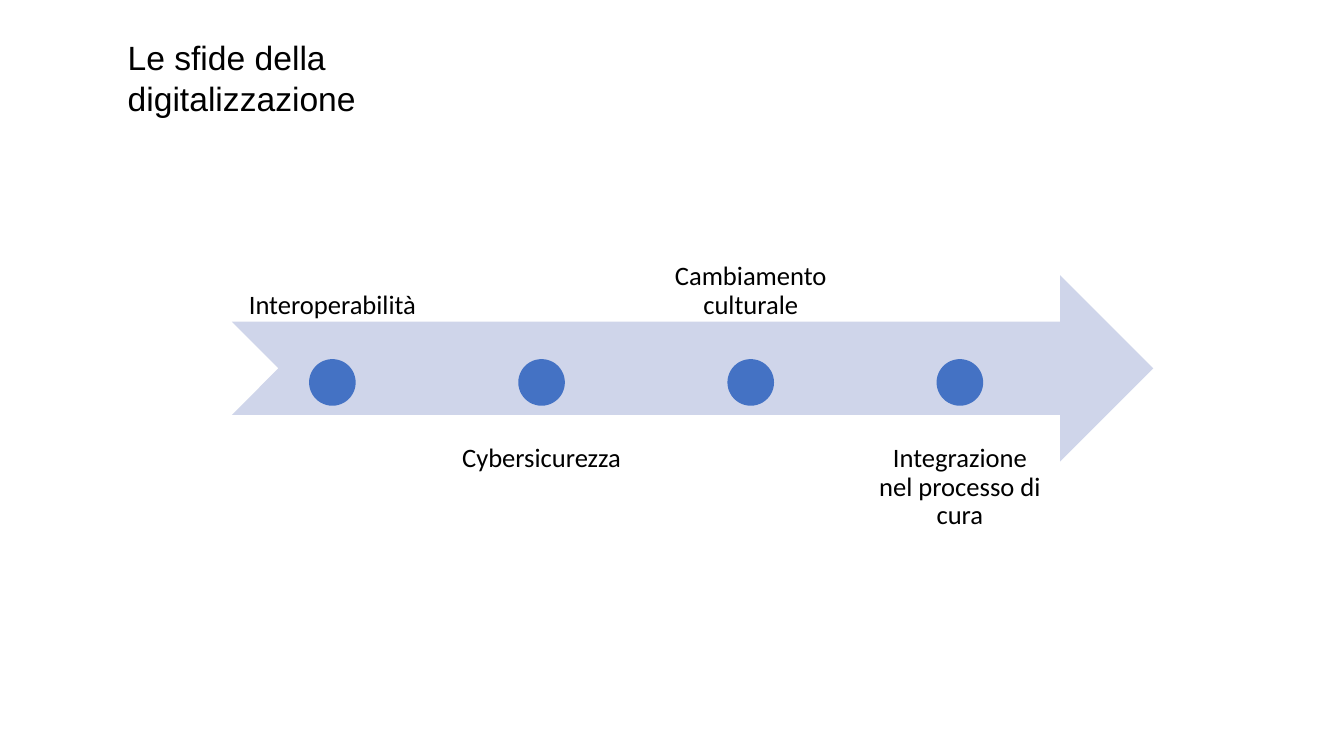
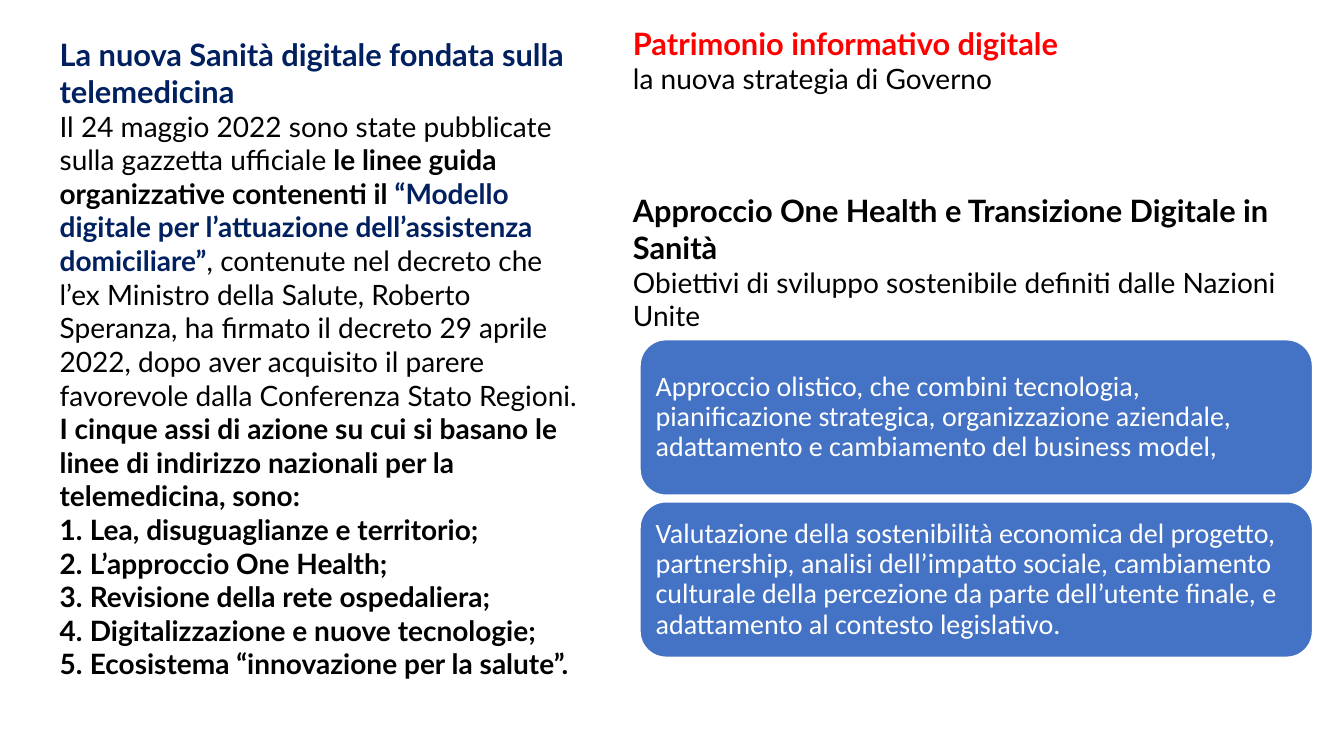
from dataclasses import dataclass, replace

from lxml.etree import SubElement
from pptx import Presentation
from pptx.dml.color import RGBColor
from pptx.enum.shapes import MSO_SHAPE
from pptx.enum.text import MSO_ANCHOR, MSO_AUTO_SIZE, PP_ALIGN
from pptx.oxml.ns import qn
from pptx.shapes.autoshape import Shape
from pptx.slide import Slide
from pptx.text.text import TextFrame
from pptx.util import Emu, Inches, Pt

BLACK = RGBColor(0x00, 0x00, 0x00)
WHITE = RGBColor(0xFF, 0xFF, 0xFF)
NAVY = RGBColor(0x00, 0x20, 0x60)
RED = RGBColor(0xFF, 0x00, 0x00)
BLUE = RGBColor(0x44, 0x72, 0xC4)
PALE = RGBColor(0xCF, 0xD5, 0xEA)

WIDTH, HEIGHT = Inches(13.33), Inches(7.5)
COLS, ROWS = 32, 18
PAD_X, PAD_Y = 0.24, 0.12


@dataclass(frozen=True)
class Box:
    col: float
    row: float
    wide: float
    high: float


@dataclass(frozen=True)
class Style:
    face: str
    size: int
    color: RGBColor = BLACK
    bold: bool = False


@dataclass(frozen=True)
class Span:
    text: str
    style: Style


@dataclass(frozen=True)
class Para:
    spans: tuple[Span, ...]
    listed: bool = False


HEAD = Style("Lato", 22, bold=True)
PLAIN = Style("Lato", 20)
STRONG = replace(PLAIN, bold=True)
LABEL = Style("Calibri", 19)
CARD = Style("Calibri", 20, WHITE)


def across(cols: float) -> Emu:
    return Emu(round(WIDTH * cols / COLS))


def down(rows: float) -> Emu:
    return Emu(round(HEIGHT * rows / ROWS))


def frame(box: Box) -> tuple[Emu, Emu, Emu, Emu]:
    return across(box.col), down(box.row), across(box.wide), down(box.high)


def line(text: str, style: Style, listed: bool = False) -> Para:
    return Para((Span(text, style),), listed)


def write(
    body: TextFrame,
    paras: list[Para],
    align: PP_ALIGN = PP_ALIGN.LEFT,
    anchor: MSO_ANCHOR = MSO_ANCHOR.TOP,
    pad_x: float = PAD_X,
    pad_y: float = PAD_Y,
    pitch: float = 1.0,
) -> None:
    body.word_wrap = True
    body.auto_size = MSO_AUTO_SIZE.NONE
    body.vertical_anchor = anchor
    body.margin_left = body.margin_right = across(pad_x)
    body.margin_top = body.margin_bottom = down(pad_y)
    for index, para in enumerate(paras):
        part = body.add_paragraph() if index else body.paragraphs[0]
        if para.listed:
            props = part._p.get_or_add_pPr()
            props.set("marL", str(across(0.72)))
            props.set("indent", str(-across(0.72)))
            SubElement(props, qn("a:buFont"), typeface="+mj-lt")
            SubElement(props, qn("a:buAutoNum"), type="arabicPeriod")
        part.alignment = align
        part.line_spacing = pitch
        for span in para.spans:
            run = part.add_run()
            run.text = span.text
            font = run.font
            font.name = span.style.face
            font.size = Pt(span.style.size)
            font.bold = span.style.bold
            font.color.rgb = span.style.color


def add_title(slide: Slide, box: Box, text: str, style: Style) -> None:
    title = slide.shapes.title
    title.left, title.top, title.width, title.height = frame(box)
    write(title.text_frame, [line(text, style)])


def add_text(slide: Slide, box: Box, paras: list[Para]) -> None:
    write(slide.shapes.add_textbox(*frame(box)).text_frame, paras)


def add_form(slide: Slide, kind: MSO_SHAPE, box: Box, fill: RGBColor) -> Shape:
    form = slide.shapes.add_shape(kind, *frame(box))
    form.shadow.inherit = False
    form.fill.solid()
    form.fill.fore_color.rgb = fill
    form.line.fill.background()
    return form


def add_step(slide: Slide, index: int, text: str) -> None:
    wide, dot = 4.75, 1.11
    col = 5.54 + 4.98 * index
    below = index % 2 == 1
    spot = Box(col, 10.22 if below else 3.55, wide, 4.44)
    label = slide.shapes.add_textbox(*frame(spot))
    anchor = MSO_ANCHOR.TOP if below else MSO_ANCHOR.BOTTOM
    write(label.text_frame, [line(text, LABEL)], PP_ALIGN.CENTER, anchor, 0.36, 0.36, 0.9)
    add_form(slide, MSO_SHAPE.OVAL, Box(col + (wide - dot) / 2, 8.55, dot, dot), BLUE)


def add_card(slide: Slide, index: int, text: str) -> None:
    box = Box(15.24, 8.09 + 3.86 * index, 16.01, 3.7)
    card = add_form(slide, MSO_SHAPE.ROUNDED_RECTANGLE, box, BLUE)
    card.line.color.rgb = WHITE
    card.line.width = Pt(1)
    write(card.text_frame, [line(text, CARD)], PP_ALIGN.LEFT, MSO_ANCHOR.MIDDLE, 0.19, 0.19, 0.9)


def draw_trials(slide: Slide) -> None:
    add_title(slide, Box(2.8, 0.77, 9.17, 2.2), "Le sfide della digitalizzazione", Style("Arial", 24))
    add_form(slide, MSO_SHAPE.NOTCHED_RIGHT_ARROW, Box(5.52, 6.55, 21.94, 4.44), PALE)
    steps = (
        "Interoperabilità",
        "Cybersicurezza",
        "Cambiamento culturale",
        "Integrazione nel processo di cura",
    )
    for index, text in enumerate(steps):
        add_step(slide, index, text)


def draw_health(slide: Slide) -> None:
    add_title(
        slide,
        Box(1.18, 0.72, 12.84, 2),
        "La nuova Sanità digitale fondata sulla telemedicina",
        replace(HEAD, color=NAVY),
    )
    news = Para((
        Span("Il 24 maggio 2022 sono state pubblicate sulla gazzetta ufficiale", PLAIN),
        Span(" le linee guida organizzative contenenti il ", STRONG),
        Span(
            "“Modello digitale per l’attuazione dell’assistenza domiciliare”",
            replace(STRONG, color=NAVY),
        ),
        Span(
            ", contenute nel decreto che l’ex Ministro della Salute, Roberto Speranza, "
            "ha firmato il decreto 29 aprile 2022, dopo aver acquisito il parere "
            "favorevole dalla Conferenza Stato Regioni.",
            PLAIN,
        ),
    ))
    lead = line(
        "I cinque assi di azione su cui si basano le linee di indirizzo nazionali "
        "per la telemedicina, sono:",
        STRONG,
    )
    goals = (
        "Lea, disuguaglianze e territorio;",
        "L’approccio One Health;",
        "Revisione della rete ospedaliera;",
        "Digitalizzazione e nuove tecnologie;",
        "Ecosistema “innovazione per la salute”.",
    )
    items = [line(text, STRONG, True) for text in goals]
    add_text(slide, Box(1.18, 2.48, 12.84, 14), [news, lead, *items])
    add_text(slide, Box(14.83, 4.44, 16.8, 2.83), [
        line("Approccio One Health e Transizione Digitale in Sanità", HEAD),
        line("Obiettivi di sviluppo sostenibile definiti dalle Nazioni Unite", PLAIN),
    ])
    add_text(slide, Box(14.83, 0.46, 16, 1.94), [
        line("Patrimonio informativo digitale", replace(HEAD, color=RED)),
        line("la nuova strategia di Governo", PLAIN),
    ])
    cards = (
        "Approccio olistico, che combini tecnologia, pianificazione strategica, "
        "organizzazione aziendale, adattamento e cambiamento del business model,",
        "Valutazione della sostenibilità economica del progetto, partnership, "
        "analisi dell’impatto sociale, cambiamento culturale della percezione da parte "
        "dell’utente finale, e adattamento al contesto legislativo.",
    )
    for index, text in enumerate(cards):
        add_card(slide, index, text)


def main() -> None:
    deck = Presentation()
    deck.slide_width, deck.slide_height = WIDTH, HEIGHT
    for draw in (draw_trials, draw_health):
        draw(deck.slides.add_slide(deck.slide_layouts[5]))
    deck.save("out.pptx")


if __name__ == "__main__":
    main()
